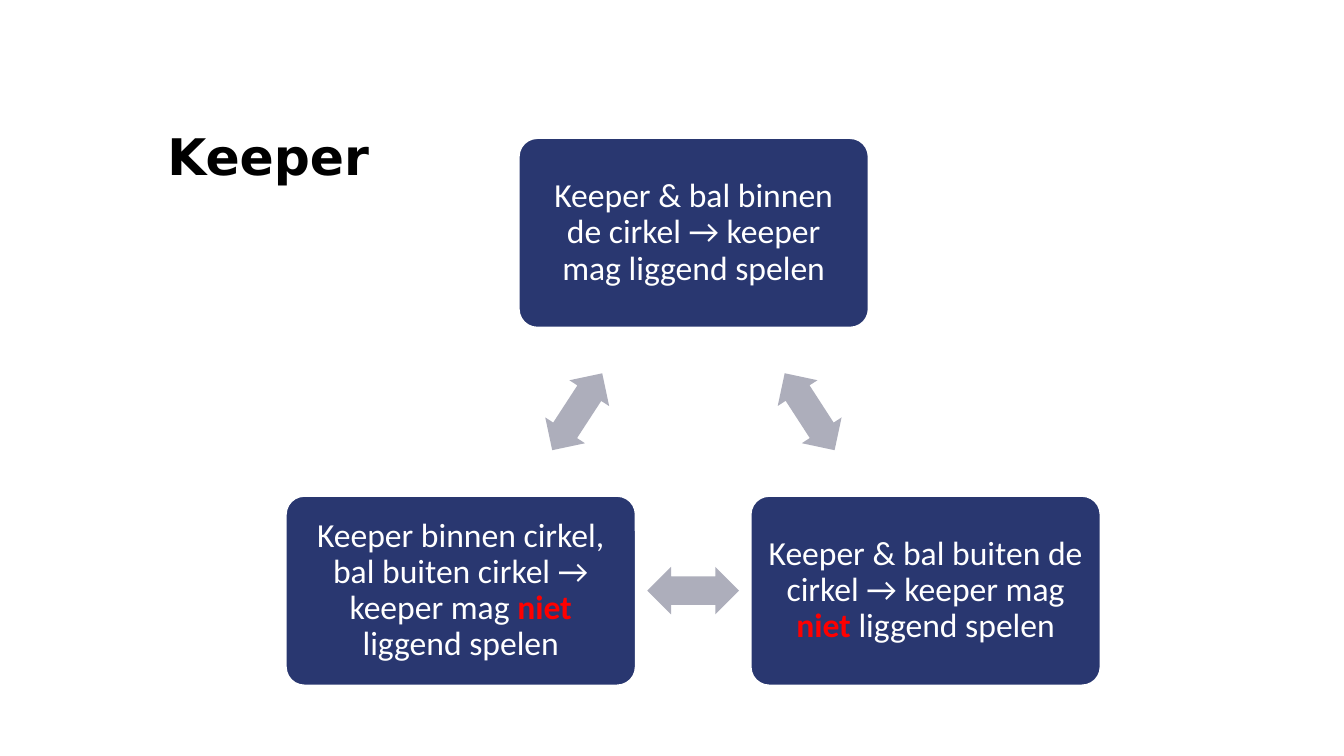
from math import atan2, degrees

from pptx import Presentation
from pptx.dml.color import RGBColor
from pptx.enum.shapes import MSO_SHAPE
from pptx.enum.text import MSO_ANCHOR, PP_ALIGN
from pptx.util import Inches, Pt

TITLE = "Keeper"
NAVY, GREY, WHITE, RED, BLACK = "293770", "ADAEBB", "FFFFFF", "FF0000", "000000"

# Each rule: centre of its box, then its text as (words, is_emphasised)
RULES = [
    ((6.88, 2.31), [("Keeper & bal binnen de cirkel → keeper mag liggend spelen", False)]),
    ((9.18, 5.86), [("Keeper & bal buiten de cirkel → keeper mag ", False),
                    ("niet ", True), ("liggend spelen", False)]),
    ((4.57, 5.86), [("Keeper binnen cirkel, bal buiten cirkel → keeper mag ", False),
                    ("niet ", True), ("liggend spelen", False)]),
]
BOX_SIZE = (3.48, 1.89)
ARROW_SIZE = (0.91, 0.47)


def color(value):
    return RGBColor.from_string(value)


def write(frame, runs, font, size, align, inset):
    """Fill a text frame with one paragraph of (text, colour, bold) runs."""
    frame.word_wrap = True
    frame.vertical_anchor = MSO_ANCHOR.MIDDLE
    frame.margin_left = frame.margin_right = Inches(inset)
    frame.margin_top = frame.margin_bottom = Inches(inset)
    paragraph = frame.paragraphs[0]
    paragraph.alignment = align
    paragraph.line_spacing = 0.9
    for text, ink, bold in runs:
        run = paragraph.add_run()
        run.text = text
        run.font.name = font
        run.font.size = Pt(size)
        run.font.bold = bold
        run.font.color.rgb = color(ink)


def add_centred(slide, kind, centre, size, fill):
    """Add a filled preset shape around its centre point."""
    left, top = (c - s / 2 for c, s in zip(centre, size))
    shape = slide.shapes.add_shape(kind, Inches(left), Inches(top),
                                   Inches(size[0]), Inches(size[1]))
    shape.shadow.inherit = False
    shape.fill.solid()
    shape.fill.fore_color.rgb = color(fill)
    return shape


def add_rule(slide, centre, parts):
    box = add_centred(slide, MSO_SHAPE.ROUNDED_RECTANGLE, centre, BOX_SIZE, NAVY)
    box.adjustments[0] = 0.1
    box.line.color.rgb = color(WHITE)
    box.line.width = Pt(2)
    runs = [(text, RED if strong else WHITE, strong) for text, strong in parts]
    write(box.text_frame, runs, font="Calibri", size=24,
          align=PP_ALIGN.CENTER, inset=0.1)


def add_arrow(slide, start, end):
    """Add a double arrow midway between two box centres, along their line."""
    (x1, y1), (x2, y2) = start, end
    middle = ((x1 + x2) / 2, (y1 + y2) / 2)
    arrow = add_centred(slide, MSO_SHAPE.LEFT_RIGHT_ARROW, middle, ARROW_SIZE, GREY)
    arrow.adjustments[0], arrow.adjustments[1] = 0.6, 0.5
    arrow.line.fill.background()
    arrow.rotation = degrees(atan2(y2 - y1, x2 - x1)) % 360


def main():
    deck = Presentation()
    deck.slide_width, deck.slide_height = Inches(13.33), Inches(7.5)
    slide = deck.slides.add_slide(deck.slide_layouts[5])

    title = slide.shapes.title
    title.left, title.top = Inches(1.61), Inches(1.15)
    title.width, title.height = Inches(10.5), Inches(0.85)
    write(title.text_frame, [(TITLE, BLACK, True)], font="DejaVu Sans", size=36,
          align=PP_ALIGN.LEFT, inset=0.05)

    centres = [centre for centre, _ in RULES]
    for (centre, parts), following in zip(RULES, centres[1:] + centres[:1]):
        add_rule(slide, centre, parts)
        add_arrow(slide, centre, following)

    deck.save("out.pptx")


if __name__ == "__main__":
    main()
